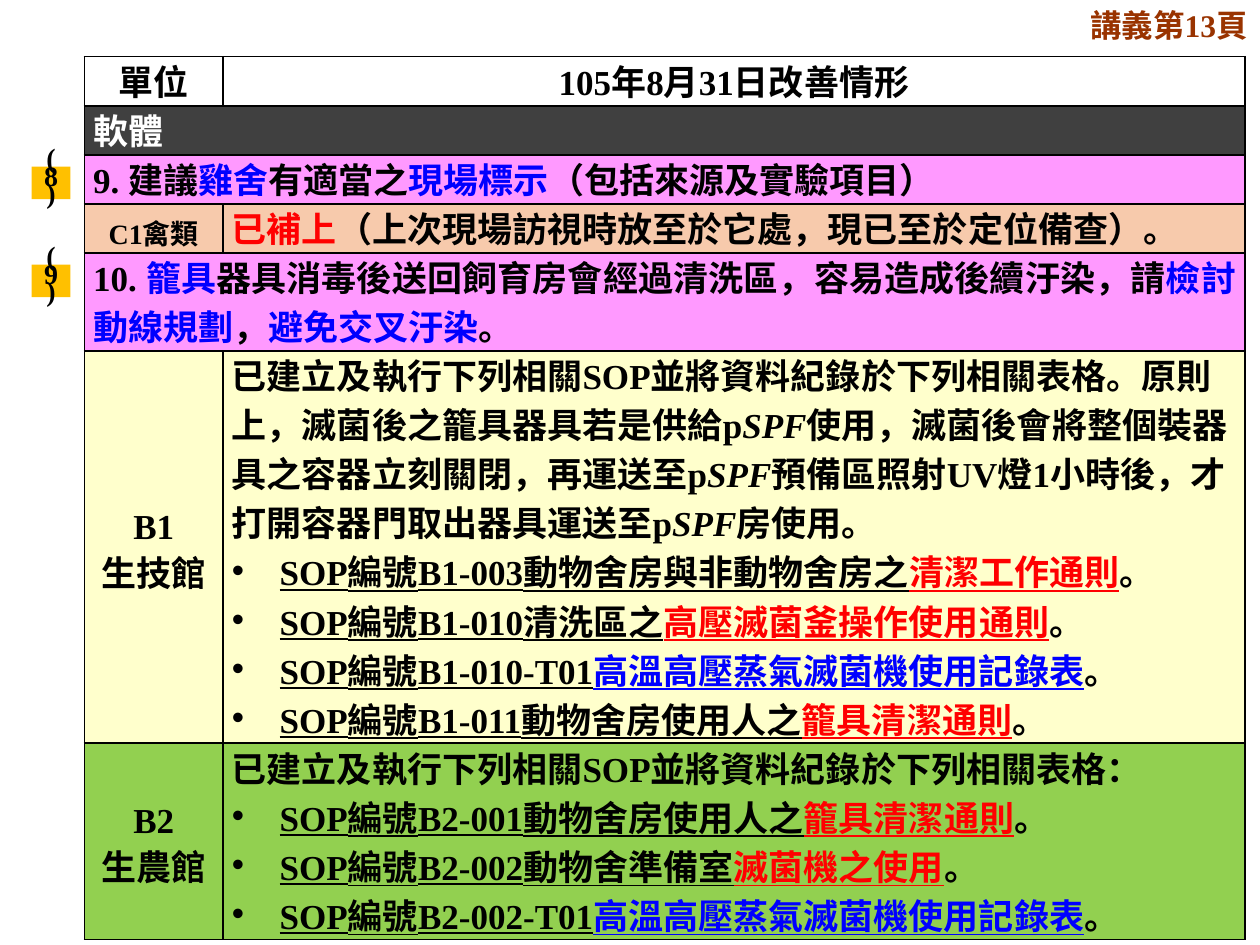
from lxml import etree
from pptx import Presentation
from pptx import util as u
from pptx.dml.color import RGBColor
from pptx.enum import shapes, text
from pptx.oxml import ns

FONT = "Times New Roman"
BLACK = RGBColor(0x00, 0x00, 0x00)
WHITE = RGBColor(0xFF, 0xFF, 0xFF)
RED = RGBColor(0xFF, 0x00, 0x00)
BLUE = RGBColor(0x00, 0x00, 0xFF)
BROWN = RGBColor(0x99, 0x33, 0x00)
AMBER = RGBColor(0xFF, 0xC0, 0x00)
CHARCOAL = RGBColor(0x40, 0x40, 0x40)
PINK = RGBColor(0xFF, 0x99, 0xFF)
PEACH = RGBColor(0xF7, 0xCA, 0xAC)
CREAM = RGBColor(0xFF, 0xFF, 0xCC)
GREEN = RGBColor(0x92, 0xD0, 0x50)

LEFT, CENTER, RIGHT, JUSTIFY = (
    text.PP_ALIGN.LEFT, text.PP_ALIGN.CENTER, text.PP_ALIGN.RIGHT, text.PP_ALIGN.JUSTIFY)
TOP, MIDDLE = text.MSO_ANCHOR.TOP, text.MSO_ANCHOR.MIDDLE

LINE = 28 / 72
ROW_LINES = [1, 1, 1, 1, 2, 8, 4]
COLUMNS = [1.1, 8.11]
TABLE_LEFT, TABLE_TOP = 0.67, 0.45


def add_run(p, words, color=BLACK, size=20, italic=False, underline=False):
    r = p.add_run()
    r.text = words
    r.font.name = FONT
    r.font.size = u.Pt(size)
    r.font.bold = True
    r.font.italic = italic
    r.font.underline = underline
    r.font.color.rgb = color


def add_bullet(p):
    pPr = p._p.get_or_add_pPr()
    indent = u.Inches(0.38)
    pPr.set("marL", str(indent))
    pPr.set("indent", str(-indent))
    etree.SubElement(pPr, ns.qn("a:buFont")).set("typeface", "Arial")
    etree.SubElement(pPr, ns.qn("a:buChar")).set("char", "•")


def write(tf, paragraphs, align=LEFT, spacing=28, size=20):
    for i, runs in enumerate(paragraphs):
        p = tf.paragraphs[0] if i == 0 else tf.add_paragraph()
        if any(style.get("underline") for _, _, style in runs):
            add_bullet(p)
        p.alignment = align
        if spacing:
            p.line_spacing = u.Pt(spacing)
        for words, color, style in runs:
            add_run(p, words, color, size, **style)


def plain(words, color=BLACK):
    return words, color, {}


def sop(number, subject, title, color=RED):
    line = {"underline": True}
    return [("SOP編號" + number + subject, BLACK, line), (title, color, line), plain("。")]


def set_borders(cell):
    tcPr = cell._tc.get_or_add_tcPr()
    for side in ("lnL", "lnR", "lnT", "lnB"):
        ln = etree.SubElement(tcPr, ns.qn("a:" + side), w=str(u.Pt(1)))
        fill = etree.SubElement(ln, ns.qn("a:solidFill"))
        etree.SubElement(fill, ns.qn("a:srgbClr"), val=str(BLACK))


def fill_cell(cell, paragraphs, fill=None, align=LEFT, anchor=TOP, size=20):
    if fill is None:
        cell.fill.background()
    else:
        cell.fill.solid()
        cell.fill.fore_color.rgb = fill
    cell.margin_left = cell.margin_right = u.Inches(0.07)
    cell.margin_top = cell.margin_bottom = 0
    cell.vertical_anchor = anchor
    write(cell.text_frame, paragraphs, align, size=size)


def add_improvement_table(s, left, top):
    shape = s.shapes.add_table(
        len(ROW_LINES), len(COLUMNS), u.Inches(left), u.Inches(top),
        u.Inches(sum(COLUMNS)), u.Inches(sum(ROW_LINES) * LINE))
    table = shape.table
    table.first_row = table.horz_banding = False
    for column, width in zip(table.columns, COLUMNS):
        column.width = u.Inches(width)
    for row, lines in zip(table.rows, ROW_LINES):
        row.height = u.Inches(lines * LINE)
    for cell in table.iter_cells():
        set_borders(cell)
    for row in (1, 2, 4):
        table.cell(row, 0).merge(table.cell(row, 1))

    def label(row, *lines, fill=None, col=0, size=20):
        fill_cell(table.cell(row, col), [[plain(line)] for line in lines],
                  fill, CENTER, MIDDLE, size)

    label(0, "單位")
    label(0, "105年8月31日改善情形", col=1)
    fill_cell(table.cell(1, 0), [[plain("軟體", WHITE)]], CHARCOAL)
    fill_cell(table.cell(2, 0), [[
        plain("9. 建議"), plain("雞舍", BLUE), plain("有適當之"),
        plain("現場標示", BLUE), plain("（包括來源及實驗項目）")]], PINK)
    label(3, "C1禽類", fill=PEACH, size=16)
    fill_cell(table.cell(3, 1), [[
        plain("已補上", RED),
        plain("（上次現場訪視時放至於它處，現已至於定位備查）。")]], PEACH)
    fill_cell(table.cell(4, 0), [[
        plain("10. "), plain("籠具", BLUE),
        plain("器具消毒後送回飼育房會經過清洗區，容易造成後續汙染，請"),
        plain("檢討動線規劃", BLUE), plain("，"),
        plain("避免交叉汙染", BLUE), plain("。")]], PINK, JUSTIFY, MIDDLE)
    spf = ("SPF", BLACK, {"italic": True})
    label(5, "B1", "生技館", fill=CREAM)
    fill_cell(table.cell(5, 1), [
        [plain("已建立及執行下列相關SOP並將資料紀錄於下列相關表格。"
               "原則上，滅菌後之籠具器具若是供給p"), spf,
         plain("使用，滅菌後會將整個裝器具之容器立刻關閉，再運送至p"), spf,
         plain("預備區照射UV燈1小時後，才打開容器門取出器具運送至p"), spf,
         plain("房使用。")],
        sop("B1-003", "動物舍房與非動物舍房之", "清潔工作通則"),
        sop("B1-010", "清洗區之", "高壓滅菌釜操作使用通則"),
        sop("B1-010-T01", "", "高溫高壓蒸氣滅菌機使用記錄表", BLUE),
        sop("B1-011", "動物舍房使用人之", "籠具清潔通則")], CREAM)
    label(6, "B2", "生農館", fill=GREEN)
    fill_cell(table.cell(6, 1), [
        [plain("已建立及執行下列相關SOP並將資料紀錄於下列相關表格：")],
        sop("B2-001", "動物舍房使用人之", "籠具清潔通則"),
        sop("B2-002", "動物舍準備室", "滅菌機之使用"),
        sop("B2-002-T01", "", "高溫高壓蒸氣滅菌機使用記錄表", BLUE)], GREEN)


def add_page_note(s, left, top, width, height):
    sp = s.shapes.add_textbox(*map(u.Inches, (left, top, width, height)))
    tf = sp.text_frame
    tf.word_wrap = True
    tf.vertical_anchor = MIDDLE
    write(tf, [[plain("講義第13頁", BROWN)]], RIGHT, None, 18)


def add_badge(s, words, left, middle, width=0.31, height=0.26):
    sp = s.shapes.add_shape(
        shapes.MSO_SHAPE.RECTANGLE,
        *map(u.Inches, (left, middle - height / 2, width, height)))
    sp.shadow.inherit = False
    sp.fill.solid()
    sp.fill.fore_color.rgb = AMBER
    sp.line.fill.background()
    tf = sp.text_frame
    tf.word_wrap = True
    tf.vertical_anchor = MIDDLE
    write(tf, [[plain(words)]], CENTER, 10, 16)


def main():
    prs = Presentation()
    prs.slide_width, prs.slide_height = u.Inches(10), u.Inches(7.5)
    s = prs.slides.add_slide(prs.slide_layouts[6])
    add_improvement_table(s, TABLE_LEFT, TABLE_TOP)
    add_page_note(s, 7.67, 0, 2.33, 0.4)
    for words, row in (("(8)", 2), ("(9)", 4)):
        middle = TABLE_TOP + (sum(ROW_LINES[:row]) + 0.5) * LINE
        add_badge(s, words, 0.25, middle + 0.03)
    prs.save("out.pptx")


if __name__ == "__main__":
    main()
